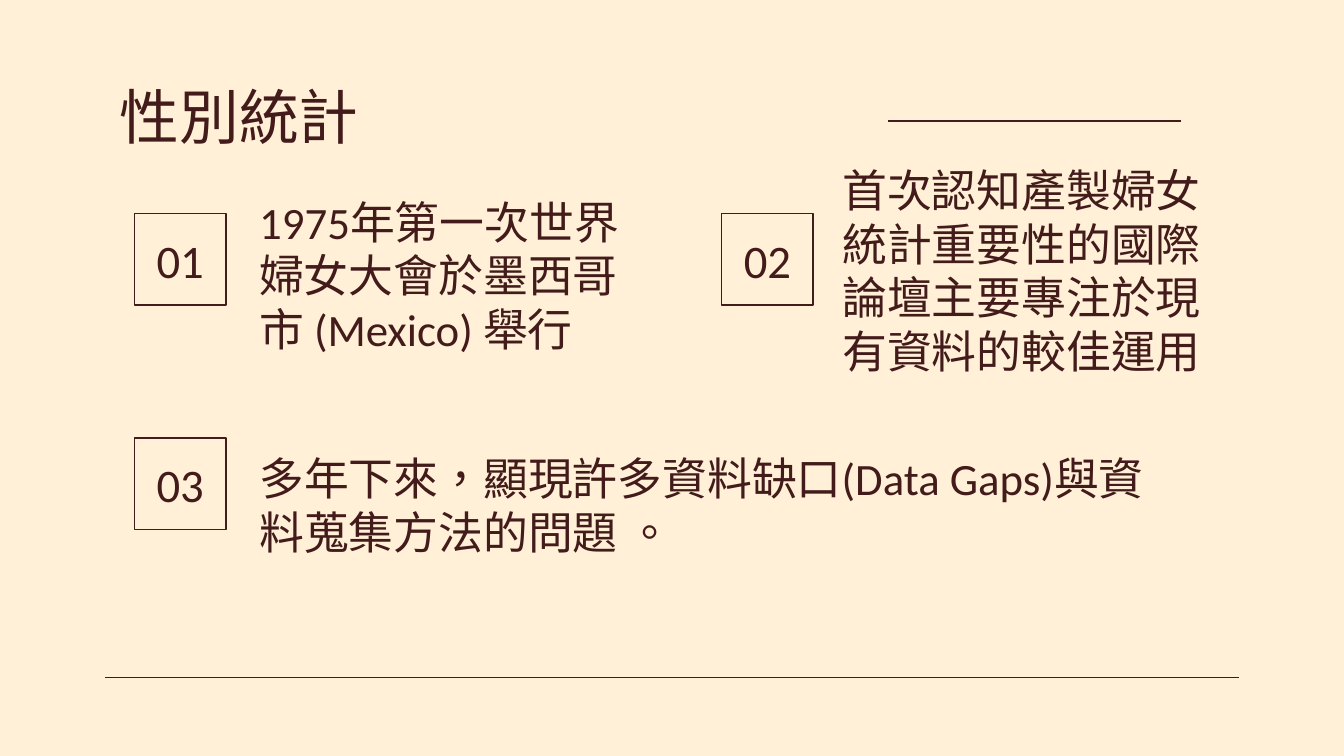
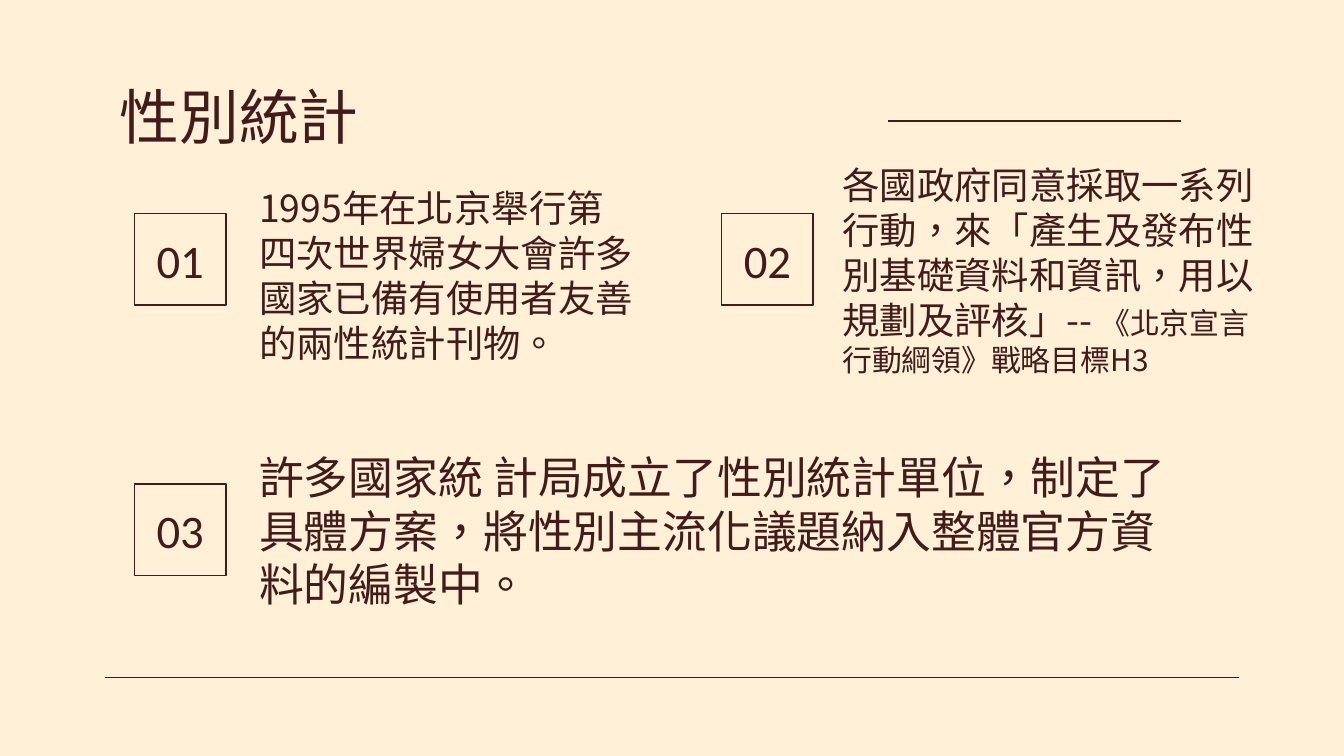
from lxml.etree import SubElement
from pptx import Presentation
from pptx.dml.color import RGBColor
from pptx.enum.lang import MSO_LANGUAGE_ID
from pptx.enum.shapes import MSO_CONNECTOR, MSO_SHAPE
from pptx.enum.text import MSO_ANCHOR, MSO_AUTO_SIZE, PP_ALIGN
from pptx.oxml.ns import qn
from pptx.util import Pt

CREAM = RGBColor(0xFF, 0xF0, 0xD7)
MAROON = RGBColor(0x42, 0x1B, 0x1A)
LATIN = "Calibri"
CHINESE = "Noto Sans CJK SC"

TITLE = "性別統計"
TITLE_BOX = (56.9, 35.3, 607, 45.4)
RULES = [(56.2, 362.9, 663.8), (475.9, 64.8, 632.9)]
NUMBER_SIDE = 49
LEFT, RIGHT, FIRST_ROW = 72, 386.6, 114.5

SLIDES = [
    {
        "font": LATIN,
        "numbers": [(LEFT, FIRST_ROW), (RIGHT, FIRST_ROW), (LEFT, 234.7)],
        "points": [
            ((131.8, 114.5, 218.9, 65.5), [("1975年第一次世界婦女大會於墨西哥市 (Mexico) 舉行", 24)]),
            ((444.2, 115.9, 218.9, 57.6), [("首次認知產製婦女統計重要性的國際論壇主要專注於現有資料的較佳運用", 24)]),
            ((131.8, 234.7, 490.3, 71.3), [("多年下來，顯現許多資料缺口(Data Gaps)與資料蒐集方法的問題 。", 24)]),
        ],
    },
    {
        "font": CHINESE,
        "numbers": [(LEFT, FIRST_ROW), (RIGHT, FIRST_ROW), (LEFT, 259.2)],
        "points": [
            ((131.8, 114.5, 218.9, 65.5), [("1995年在北京舉行第四次世界婦女大會許多國家已備有使用者友善的兩性統計刊物。", 20)]),
            ((444.2, 115.9, 241.9, 57.6), [
                ("各國政府同意採取一系列行動，來「產生及發布性別基礎資料和資訊，用以規劃及評核」--", 20),
                (" ", 18),
                ("《北京宣言行動綱領》戰略目標H3", 16),
            ]),
            ((131.8, 248.4, 501.1, 71.3), [("許多國家統 計局成立了性別統計單位，制定了具體方案，將性別主流化議題納入整體官方資料的編製中。", 24)]),
        ],
    },
]


def write_text(shape, runs, font=LATIN, align=PP_ALIGN.LEFT, anchor=MSO_ANCHOR.MIDDLE):
    frame = shape.text_frame
    frame.word_wrap = True
    frame.auto_size = MSO_AUTO_SIZE.NONE
    frame.vertical_anchor = anchor
    frame.margin_left = frame.margin_right = frame.margin_top = frame.margin_bottom = Pt(7.2)
    paragraph = frame.paragraphs[0]
    paragraph.alignment = align
    paragraph.line_spacing = 1.0
    paragraph.space_before = Pt(0)
    for text, size in runs:
        run = paragraph.add_run()
        run.text = text
        run.font.size = Pt(size)
        run.font.name = font
        run.font.color.rgb = MAROON
        run.font.language_id = MSO_LANGUAGE_ID.TRADITIONAL_CHINESE
        SubElement(run.font._element, qn("a:ea")).set("typeface", CHINESE)


def add_rule(slide, left, top, right):
    rule = slide.shapes.add_connector(MSO_CONNECTOR.STRAIGHT, Pt(left), Pt(top), Pt(right), Pt(top))
    rule.line.color.rgb = MAROON
    rule.line.width = Pt(0.75)
    SubElement(rule._element.spPr, qn("a:effectLst"))


def add_number(slide, number, left, top):
    box = slide.shapes.add_shape(MSO_SHAPE.RECTANGLE, Pt(left), Pt(top), Pt(NUMBER_SIDE), Pt(NUMBER_SIDE))
    box.shadow.inherit = False
    box.fill.background()
    box.line.color.rgb = MAROON
    box.line.width = Pt(0.75)
    write_text(box, [(f"{number:02d}", 25)], align=PP_ALIGN.CENTER)


def build_slide(presentation, content):
    slide = presentation.slides.add_slide(presentation.slide_layouts[5])
    title = slide.shapes.title
    title.left, title.top, title.width, title.height = map(Pt, TITLE_BOX)
    write_text(title, [(TITLE, 32)], anchor=MSO_ANCHOR.TOP)
    for rule in RULES:
        add_rule(slide, *rule)
    for number, position in enumerate(content["numbers"], 1):
        add_number(slide, number, *position)
    for box, runs in content["points"]:
        point = slide.shapes.add_textbox(*map(Pt, box))
        write_text(point, runs, font=content["font"])


def main():
    presentation = Presentation()
    presentation.slide_width = Pt(720)
    presentation.slide_height = Pt(405)
    background = presentation.slide_master.background.fill
    background.solid()
    background.fore_color.rgb = CREAM
    for content in SLIDES:
        build_slide(presentation, content)
    presentation.save("out.pptx")


if __name__ == "__main__":
    main()
